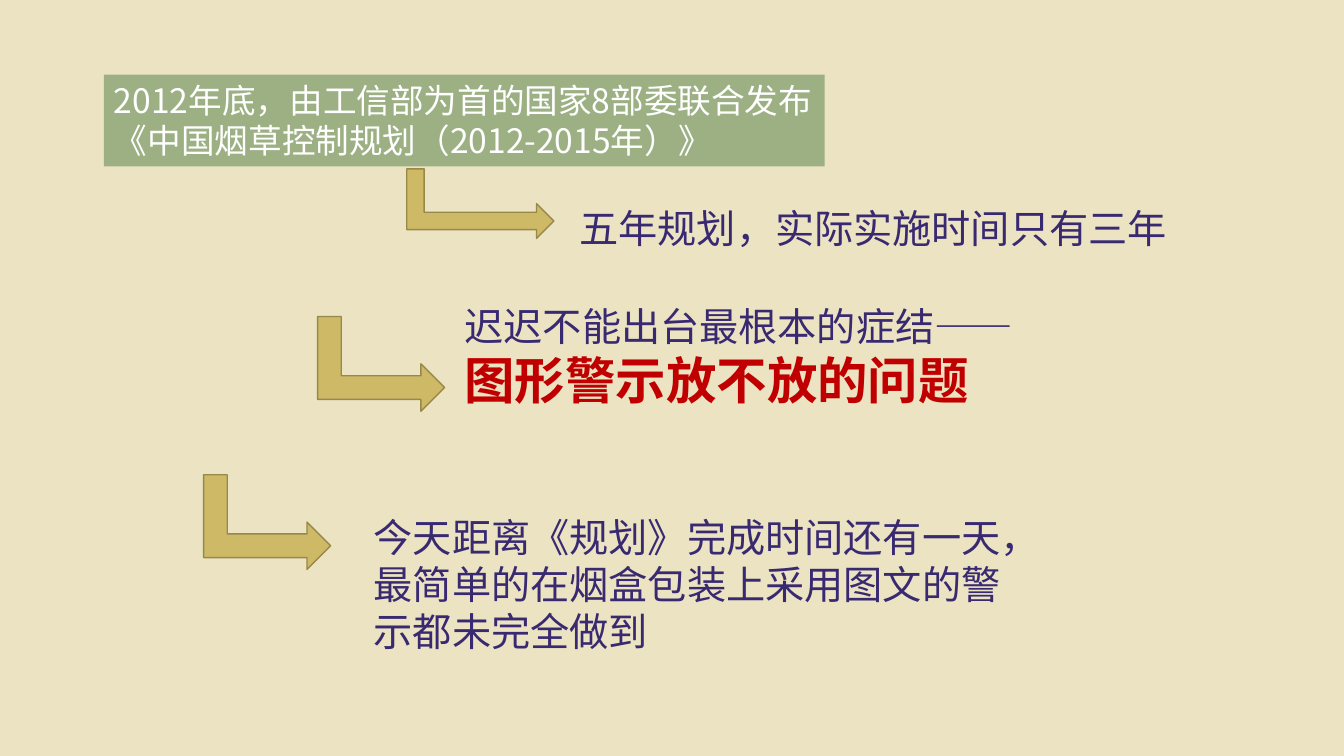
from dataclasses import dataclass

from lxml.etree import SubElement
from pptx import Presentation
from pptx.dml.color import RGBColor
from pptx.enum.shapes import MSO_SHAPE
from pptx.enum.text import MSO_ANCHOR, PP_ALIGN
from pptx.oxml.ns import qn
from pptx.slide import Slide
from pptx.text.text import Font, TextFrame
from pptx.util import Inches, Pt

SLIDE_WIDTH = Inches(13.33)
SLIDE_HEIGHT = Inches(7.5)
FONT_NAME = "Noto Sans CJK SC"
COLORS = {
    "background": "EBE3C2",
    "banner": "9CB084",
    "banner_text": "FFFFFF",
    "body": "382971",
    "emphasis": "C00000",
    "arrow": "CEB966",
    "arrow_line": "98894B",
}


@dataclass(frozen=True)
class Box:
    """Percentages of the slide's width and height."""

    left: float
    top: float
    width: float
    height: float

    def lengths(self) -> tuple[int, int, int, int]:
        return (
            round(SLIDE_WIDTH * self.left / 100),
            round(SLIDE_HEIGHT * self.top / 100),
            round(SLIDE_WIDTH * self.width / 100),
            round(SLIDE_HEIGHT * self.height / 100),
        )


@dataclass(frozen=True)
class Style:
    size: int
    color: str
    bold: bool = False


@dataclass(frozen=True)
class Step:
    arrow: Box
    text_box: Box
    pieces: tuple[tuple[str, Style], ...]
    wrap: bool = True


BANNER = Style(24, "banner_text")
BODY = Style(28, "body")
EMPHASIS = Style(36, "emphasis", True)

TITLE_BOX = Box(7.73, 9.87, 53.63, 12.13)
TITLE = "2012年底，由工信部为首的国家8部委联合发布《中国烟草控制规划（2012-2015年）》"
STEPS = (
    Step(
        Box(30.26, 22.33, 10.95, 9.2),
        Box(42.38, 26.4, 45.68, 7.6),
        (("五年规划，实际实施时间只有三年", BODY),),
        wrap=False,
    ),
    Step(
        Box(23.63, 41.87, 9.45, 12.53),
        Box(33.83, 39.33, 45.3, 19.73),
        (("迟迟不能出台最根本的症结——", BODY), ("图形警示放不放的问题", EMPHASIS)),
    ),
    Step(
        Box(15.15, 62.8, 9.45, 12.53),
        Box(27.08, 67.2, 49.73, 20.13),
        (("今天距离《规划》完成时间还有一天，最简单的在烟盒包装上采用图文的警示都未完全做到", BODY),),
    ),
)


def color(name: str) -> RGBColor:
    return RGBColor.from_string(COLORS[name])


def apply_style(font: Font, style: Style) -> None:
    font.size = Pt(style.size)
    font.bold = style.bold
    font.color.rgb = color(style.color)


def write_text(frame: TextFrame, pieces: tuple[tuple[str, Style], ...], wrap: bool = True) -> None:
    frame.word_wrap = wrap
    frame.vertical_anchor = MSO_ANCHOR.TOP
    paragraph = frame.paragraphs[0]
    paragraph.alignment = PP_ALIGN.LEFT
    paragraph.font.name = FONT_NAME
    apply_style(paragraph.font, pieces[0][1])
    default_properties = paragraph._p.pPr.find(qn("a:defRPr"))
    SubElement(default_properties, qn("a:ea")).set("typeface", FONT_NAME)
    for text, style in pieces:
        run = paragraph.add_run()
        run.text = text
        if style != pieces[0][1]:
            apply_style(run.font, style)


def add_title(slide: Slide) -> None:
    title = slide.shapes.title
    title.left, title.top, title.width, title.height = TITLE_BOX.lengths()
    title.fill.solid()
    title.fill.fore_color.rgb = color("banner")
    write_text(title.text_frame, ((TITLE, BANNER),))


def add_arrow(slide: Slide, box: Box) -> None:
    left, top, width, height = box.lengths()
    inset = (width - height) // 2
    arrow = slide.shapes.add_shape(
        MSO_SHAPE.BENT_UP_ARROW, left + inset, top - inset, height, width
    )
    arrow.rotation = 90
    arrow.shadow.inherit = False
    arrow.fill.solid()
    arrow.fill.fore_color.rgb = color("arrow")
    arrow.line.color.rgb = color("arrow_line")
    arrow.line.width = Pt(1)


def add_step(slide: Slide, step: Step) -> None:
    add_arrow(slide, step.arrow)
    text_box = slide.shapes.add_textbox(*step.text_box.lengths())
    write_text(text_box.text_frame, step.pieces, step.wrap)


def main() -> None:
    presentation = Presentation()
    presentation.slide_width = SLIDE_WIDTH
    presentation.slide_height = SLIDE_HEIGHT
    slide = presentation.slides.add_slide(presentation.slide_layouts[5])
    slide.background.fill.solid()
    slide.background.fill.fore_color.rgb = color("background")
    add_title(slide)
    for step in STEPS:
        add_step(slide, step)
    presentation.save("out.pptx")


if __name__ == "__main__":
    main()
